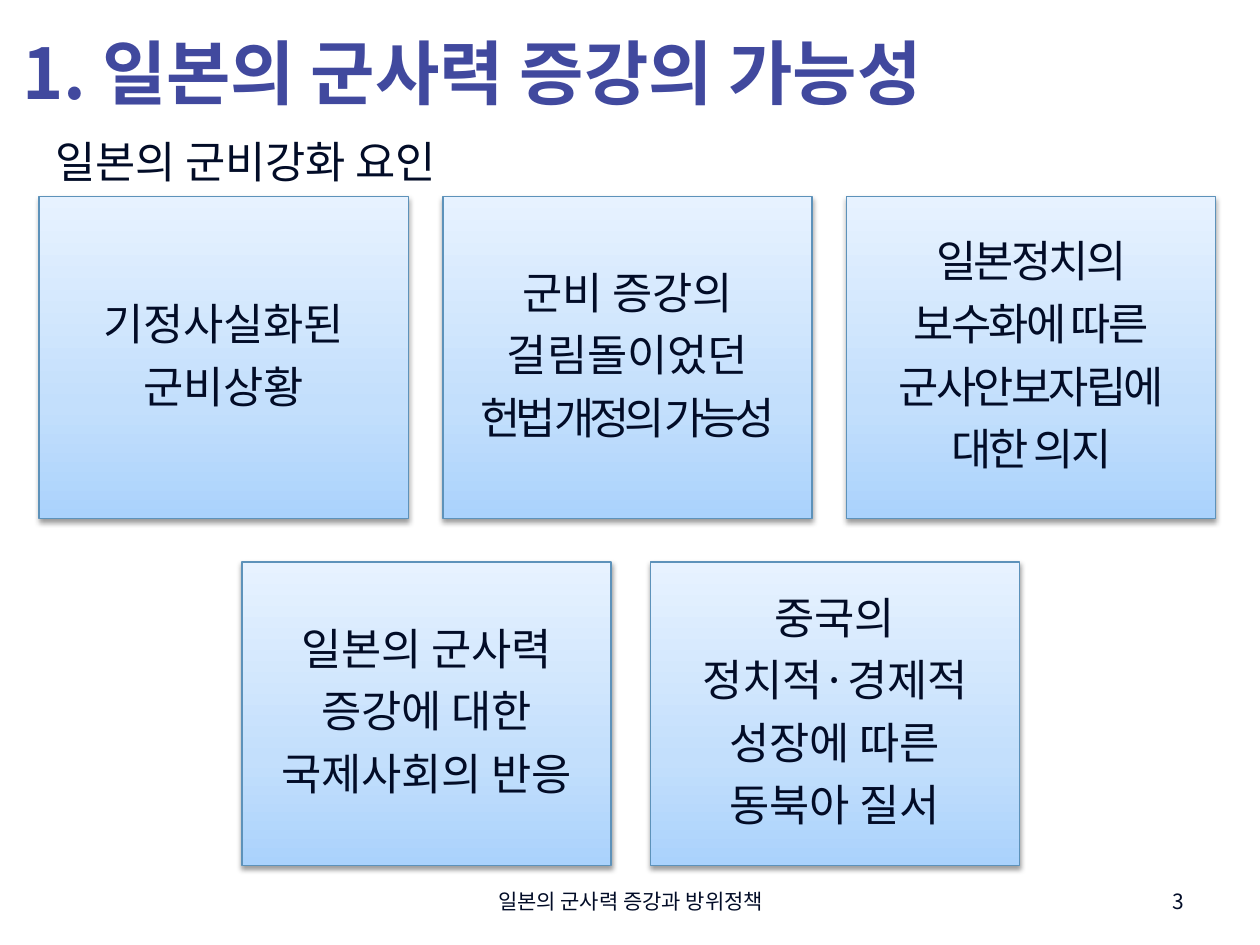
import copy

import pptx
import pptx.dml.color
import pptx.enum.shapes
import pptx.enum.text
import pptx.oxml
import pptx.oxml.ns
import pptx.util

Cm, Pt = pptx.util.Cm, pptx.util.Pt
ALIGN = pptx.enum.text.PP_ALIGN
ANCHOR = pptx.enum.text.MSO_ANCHOR
NAMESPACE = 'xmlns:a="http://schemas.openxmlformats.org/drawingml/2006/main"'

FONT = "Noto Sans CJK KR"
INK, TITLE_COLOR, BORDER = "020C27", "41499E", "5D92BA"
CARD_GRADIENT = [(0, "AAD2FC"), (0.35, "C3DFFC"), (1, "E7F2FF")]

# text, (left, top, width, height) in cm, size, colour, bold, alignment, anchor
LABELS = [
    ("1. 일본의 군사력 증강의 가능성", (0.2, 0.2, 24, 2.49), 40, TITLE_COLOR, True,
     ALIGN.LEFT, ANCHOR.MIDDLE),
    ("일본의 군비강화 요인", (0.86, 2.59, 9.12, 1.32), 25, INK, False,
     ALIGN.LEFT, ANCHOR.TOP),
    ("일본의 군사력 증강과 방위정책", (8.69, 17.65, 8.05, 1.02), 12, INK, False,
     ALIGN.CENTER, ANCHOR.MIDDLE),
    ("3", (18.21, 17.65, 5.92, 1.02), 12, INK, False, ALIGN.RIGHT, ANCHOR.MIDDLE),
]

# Each card is a list of (line, character spacing in points)
CARD_WIDTH = 7.44
CARD_ROWS = [
    {"left": 0.79, "top": 3.96, "height": 6.5, "pitch": 8.14, "cards": [
        [("기정사실화된", 0), ("군비상황", 0)],
        [("군비 증강의", 0), ("걸림돌이었던", 0), ("헌법 개정의 가능성", -3)],
        [("일본정치의", -1.5), ("보수화에 따른", -1.5),
         ("군사안보자립에", -1.5), ("대한 의지", -1.5)],
    ]},
    {"left": 4.88, "top": 11.33, "height": 6.12, "pitch": 8.23, "cards": [
        [("일본의 군사력", 0), ("증강에 대한", 0), ("국제사회의 반응", 0)],
        [("중국의", 0), ("정치적·경제적", 0), ("성장에 따른", 0), ("동북아 질서", 0)],
    ]},
]


def rgb(value):
    return pptx.dml.color.RGBColor.from_string(value)


def format_run(run, size, color, bold=False, spacing=0):
    run.font.size = Pt(size)
    run.font.bold = bold
    run.font.color.rgb = rgb(color)
    run.font.name = FONT
    properties = run._r.get_or_add_rPr()
    properties.append(pptx.oxml.parse_xml(f'<a:ea {NAMESPACE} typeface="{FONT}"/>'))
    if spacing:
        properties.set("spc", str(int(spacing * 100)))


def add_label(slide, text, box, size, color, bold, alignment, anchor):
    frame = slide.shapes.add_textbox(*map(Cm, box)).text_frame
    frame.word_wrap = True
    frame.vertical_anchor = anchor
    frame.text = text
    paragraph = frame.paragraphs[0]
    paragraph.alignment = alignment
    format_run(paragraph.runs[0], size, color, bold)


def style_card(shape):
    """Give the card its gradient, border and soft shadow below."""
    shape.fill.gradient()
    shape.fill.gradient_angle = 90
    stop_list = shape._element.spPr.find(".//" + pptx.oxml.ns.qn("a:gsLst"))
    stop_list.append(copy.deepcopy(stop_list[0]))
    for stop, (position, color) in zip(shape.fill.gradient_stops, CARD_GRADIENT):
        stop.position = position
        stop.color.rgb = rgb(color)
    shape.line.color.rgb = rgb(BORDER)
    shape.line.width = Pt(0.75)
    shape.shadow.inherit = False
    effects = shape._element.spPr.find(pptx.oxml.ns.qn("a:effectLst"))
    effects.append(pptx.oxml.parse_xml(
        f'<a:outerShdw {NAMESPACE} blurRad="{Pt(3.1)}" dist="{Pt(1.6)}" dir="5400000"'
        ' rotWithShape="0"><a:srgbClr val="000000"><a:alpha val="38000"/></a:srgbClr>'
        '</a:outerShdw>'))


def add_card(slide, box, lines):
    shape = slide.shapes.add_shape(
        pptx.enum.shapes.MSO_SHAPE.RECTANGLE, *map(Cm, box))
    style_card(shape)
    frame = shape.text_frame
    frame.word_wrap = True
    frame.vertical_anchor = ANCHOR.MIDDLE
    frame.margin_left = frame.margin_right = Cm(0.25)
    frame.margin_top = frame.margin_bottom = Cm(0.25)
    frame.text = "\n".join(text for text, _ in lines)
    for paragraph, (_, spacing) in zip(frame.paragraphs, lines):
        paragraph.alignment = ALIGN.CENTER
        paragraph.line_spacing = 0.9
        paragraph._p.get_or_add_pPr().append(pptx.oxml.parse_xml(
            f'<a:spcAft {NAMESPACE}><a:spcPct val="35000"/></a:spcAft>'))
        format_run(paragraph.runs[0], 25, INK, spacing=spacing)


def main():
    presentation = pptx.Presentation()
    presentation.slide_width, presentation.slide_height = Cm(25.4), Cm(19.05)
    slide = presentation.slides.add_slide(presentation.slide_layouts[6])
    for row in CARD_ROWS:
        for column, lines in enumerate(row["cards"]):
            left = row["left"] + column * row["pitch"]
            add_card(slide, (left, row["top"], CARD_WIDTH, row["height"]), lines)
    for label in LABELS:
        add_label(slide, *label)
    presentation.save("out.pptx")


if __name__ == "__main__":
    main()
